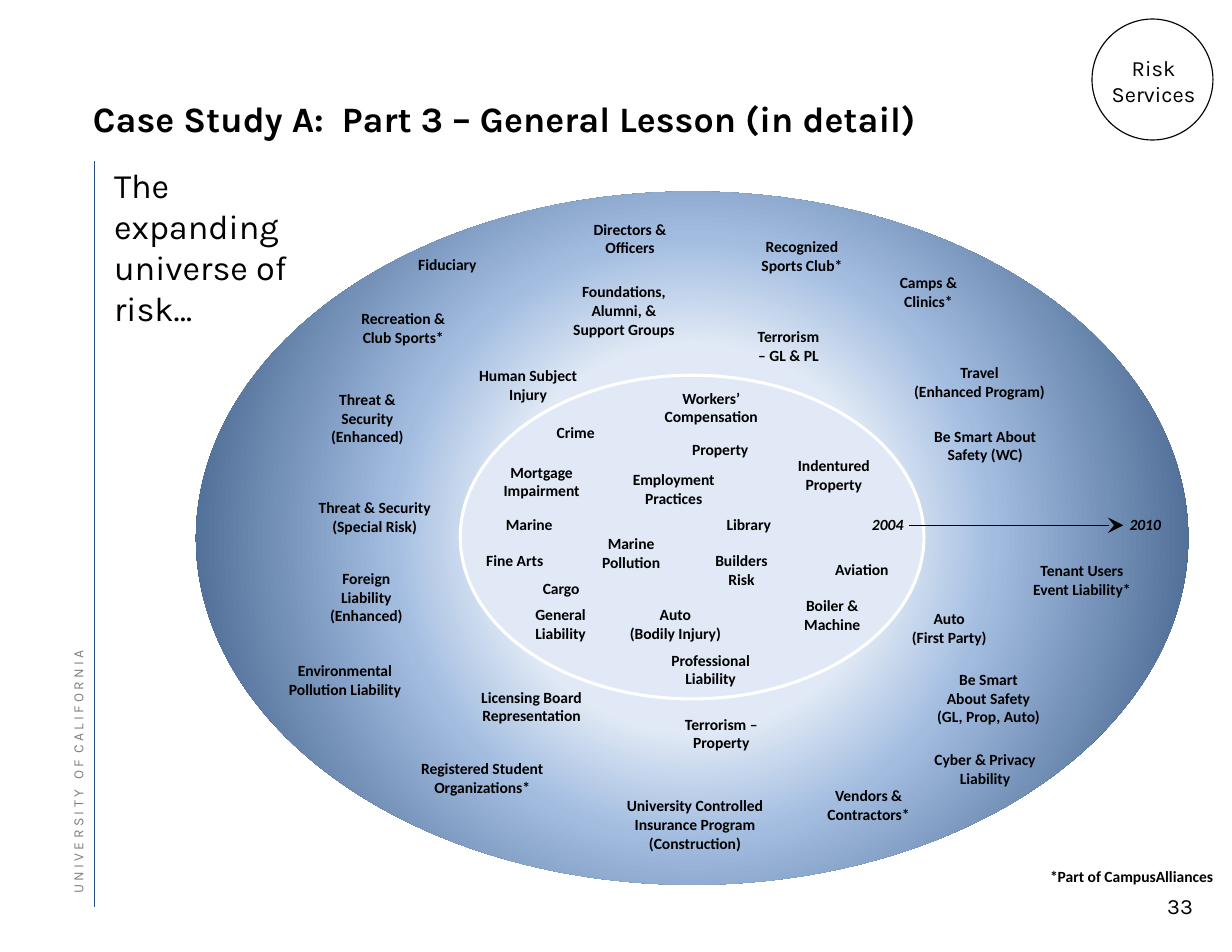
from lxml import etree
from pptx import Presentation
from pptx.dml.color import RGBColor
from pptx.enum.shapes import MSO_CONNECTOR as Conn, MSO_SHAPE as Shape
from pptx.enum.text import MSO_ANCHOR as Anchor, PP_ALIGN as Align
from pptx.oxml import parse_xml
from pptx.oxml.ns import nsdecls, qn
from pptx.util import Inches, Pt

BLACK = RGBColor(0, 0, 0)
WHITE = RGBColor(0xFF, 0xFF, 0xFF)
GRAY = RGBColor(0x80, 0x80, 0x80)
NAVY = RGBColor(0x26, 0x4E, 0x84)
PALE = RGBColor(0xE0, 0xE9, 0xF5)
MID = RGBColor(0xA2, 0xBC, 0xE0)
DARK = RGBColor(0x26, 0x46, 0x71)

deck = Presentation()
deck.slide_width = Inches(11)
deck.slide_height = Inches(8.5)
slide = deck.slides.add_slide(deck.slide_layouts[6])
shapes = slide.shapes


def add_text(rect, words, size, font="Karla", color=BLACK, bold=False,
             align=Align.LEFT, inset=True, wrap=True):
    box = shapes.add_textbox(*[Inches(n) for n in rect])
    frame = box.text_frame
    frame.word_wrap = wrap
    if not inset:
        frame.margin_left = frame.margin_right = 0
        frame.margin_top = frame.margin_bottom = 0
    para = frame.paragraphs[0]
    para.text = words
    para.alignment = align
    for run in para.runs:
        run.font.size = Pt(size)
        run.font.name = font
        run.font.bold = bold
        run.font.color.rgb = color
    return box


def add_line(x1, y1, x2, y2, color, width):
    line = shapes.add_connector(
        Conn.STRAIGHT, Inches(x1), Inches(y1), Inches(x2), Inches(y2))
    line.line.color.rgb = color
    line.line.width = Pt(width)
    etree.SubElement(line._element.spPr, qn("a:effectLst"))
    return line


add_line(0.84, 1.44, 0.84, 8.1, NAVY, 0.35)
add_text((10.25, 7.92, 0.5, 0.33), "33", 14, align=Align.RIGHT)
side = add_text((-1.47, 5.74, 4.33, 0.15),
                "U N I V E R S I T Y   O F  C A L I F O R N I A",
                9, color=GRAY, inset=False)
side.rotation = 270
side.text_frame.vertical_anchor = Anchor.BOTTOM
side.text_frame.paragraphs[0].line_spacing = Pt(12)
title = add_text((0.83, 0.92, 8.92, 0.33),
                 "Case Study A:  Part 3 – General Lesson (in detail)",
                 23, bold=True, inset=False)
title.text_frame.vertical_anchor = Anchor.BOTTOM
title.text_frame.paragraphs[0].line_spacing = Pt(27.9)

ovals = []
for rect, fill, edge, width in (
    ((9.75, 0.17, 1.08, 1.08), None, BLACK, 0.75),
    ((1.75, 1.71, 8.86, 6.19), None, None, 0),
    ((4.11, 3.35, 4.14, 2.89), PALE, WHITE, 2),
):
    oval = shapes.add_shape(Shape.OVAL, *[Inches(n) for n in rect])
    oval.shadow.inherit = False
    if fill:
        oval.fill.solid()
        oval.fill.fore_color.rgb = fill
    else:
        oval.fill.background()
    if edge:
        oval.line.color.rgb = edge
        oval.line.width = Pt(width)
    else:
        oval.line.fill.background()
    ovals.append(oval)

stops = "".join(
    f'<a:gs pos="{pos * 1000}"><a:srgbClr val="{color}"/></a:gs>'
    for pos, color in ((32, PALE), (50, MID), (100, DARK)))
grad = parse_xml(
    f'<a:gradFill {nsdecls("a")} rotWithShape="1"><a:gsLst>{stops}</a:gsLst>'
    '<a:path path="circle"><a:fillToRect l="50000" t="50000" r="50000" b="50000"/>'
    '</a:path></a:gradFill>')
props = ovals[1]._element.spPr
props.replace(props.find(qn("a:noFill")), grad)

add_text((9.82, 0.44, 0.96, 0.57), "Risk\nServices", 14, align=Align.CENTER)

risks = (
    (5.66, 3.47, 1.38, "Workers’\nCompensation"),
    (4.63, 5.4, 0.75, "General\nLiability"),
    (5.36, 5.4, 1.34, "Auto\n(Bodily Injury)"),
    (5.78, 5.81, 1.13, "Professional\nLiability"),
    (2.81, 5.08, 0.92, "Foreign\nLiability\n(Enhanced)"),
    (7.31, 5, 0.77, "Aviation"),
    (4.4, 4.6, 0.65, "Marine"),
    (5.43, 4.2, 1.17, "Employment\nPractices"),
    (6.01, 3.93, 0.84, "Property"),
    (6.35, 4.6, 0.67, "Library"),
    (4.17, 4.92, 0.85, "Fine Arts"),
    (7.04, 5.32, 0.78, "Boiler &\nMachine"),
    (6.24, 4.92, 0.76, "Builders\nRisk"),
    (4.84, 3.78, 0.6, "Crime"),
    (6.93, 4.07, 1.03, "Indentured\nProperty"),
    (4.75, 5.17, 0.52, "Cargo"),
    (4.08, 3.27, 1.27, "Human Subject\nInjury"),
    (5.26, 4.77, 0.75, "Marine\nPollution"),
    (5.94, 6.38, 1, "Terrorism –\nProperty"),
    (8.12, 3.81, 1.35, "Be Smart About\nSafety (WC)"),
    (7.97, 5.44, 1.01, "Auto\n(First Party)"),
    (6.61, 2.92, 0.86, "Terrorism\n– GL & PL"),
    (7.89, 3.24, 1.71, "Travel\n(Enhanced Program)"),
    (2.61, 4.45, 1.47, "Threat & Security\n(Special Risk)"),
    (4.34, 4.13, 0.99, "Mortgage\nImpairment"),
    (8.13, 5.98, 1.39, "Be Smart\nAbout Safety\n(GL, Prop, Auto)"),
    (4.91, 2.52, 1.32, "Foundations,\nAlumni, &\nSupport Groups"),
    (8.13, 6.7, 1.33, "Cyber & Privacy\nLiability"),
    (2.36, 5.9, 1.44, "Environmental\nPollution Liability"),
    (3.06, 2.76, 1.08, "Recreation &\nClub Sports*"),
    (4.09, 6.14, 1.31, "Licensing Board\nRepresentation"),
    (2.81, 3.48, 0.94, "Threat &\nSecurity\n(Enhanced)"),
    (5.14, 1.96, 0.97, "Directors &\nOfficers"),
    (3.52, 6.78, 1.57, "Registered Student\nOrganizations*"),
    (9.03, 5.01, 1.26, "Tenant Users\nEvent Liability*"),
    (6.63, 2.12, 1.06, "Recognized\nSports Club*"),
    (7.91, 2.44, 0.76, "Camps &\nClinics*"),
    (7.21, 7.02, 1.09, "Vendors &\nContractors*"),
    (5.32, 7.11, 1.77, "University Controlled\nInsurance Program\n(Construction)"),
    (3.61, 2.28, 0.77, "Fiduciary"),
)
for x, y, w, words in risks:
    tall = 0.17 * (words.count("\n") + 1)
    add_text((x, y, w, tall), words, 10, "Calibri", bold=True,
             align=Align.CENTER, inset=False, wrap=False)

years = []
for x, year in ((7.73, "2004"), (10.03, "2010")):
    box = add_text((x, 4.6, 0.39, 0.18), year, 10, "Calibri", bold=True,
                   align=Align.CENTER, inset=False, wrap=False)
    box.text_frame.paragraphs[0].runs[0].font.italic = True
    years.append(box)

arrow = add_line(8.12, 4.69, 10.03, 4.69, BLACK, 0.75)
arrow.begin_connect(years[0], 3)
arrow.end_connect(years[1], 1)
etree.SubElement(arrow.line._get_or_add_ln(), qn("a:tailEnd"),
                 type="stealth", w="lg", len="lg")

add_text((8.52, 7.74, 2.31, 0.17), "*Part of CampusAlliances", 10, "Calibri",
         bold=True, align=Align.RIGHT, inset=False)
add_text((0.92, 1.42, 2.17, 1.58), "The expanding universe of risk…", 22)

deck.save("out.pptx")
